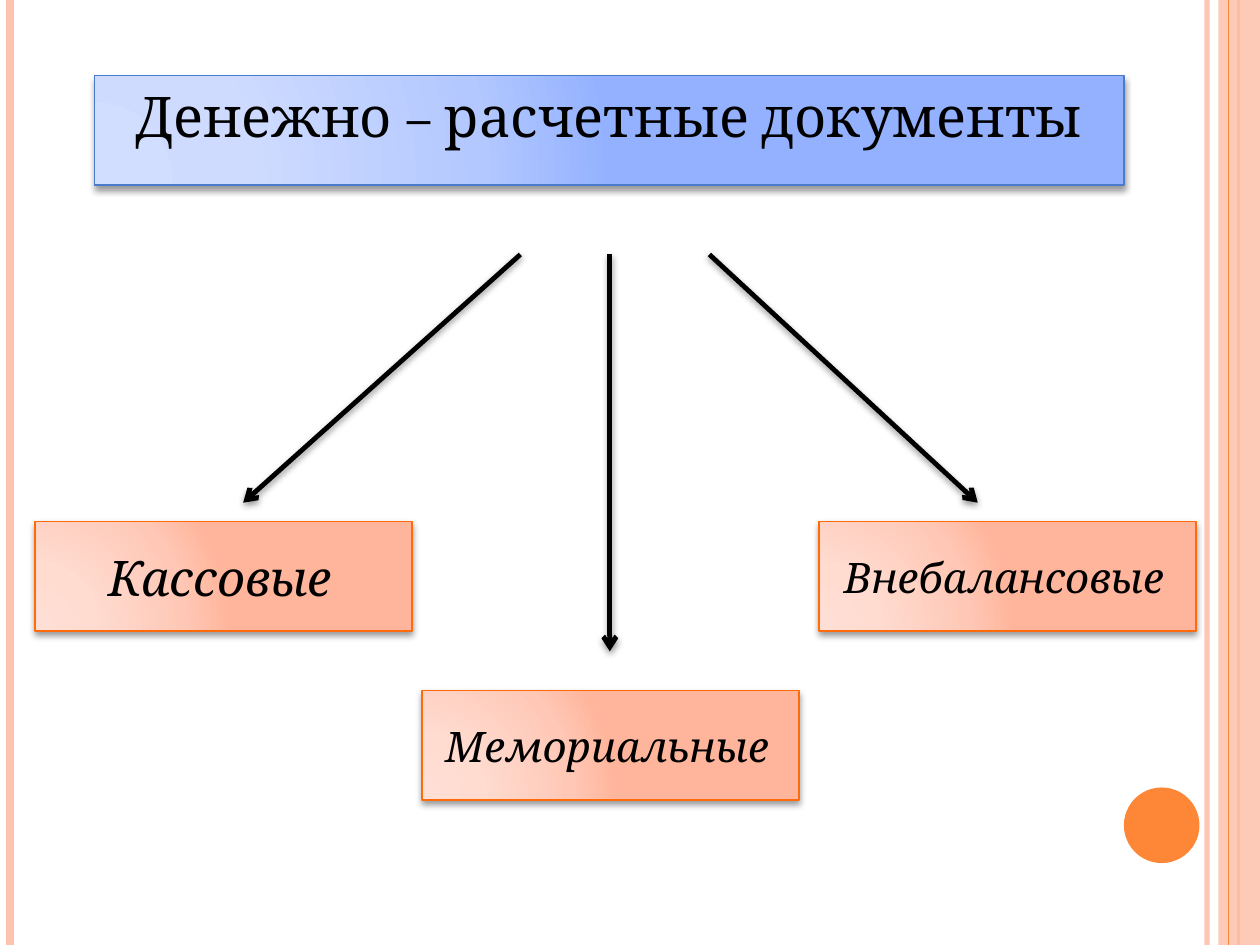
from dataclasses import dataclass

from lxml import etree
from pptx import Presentation
from pptx.dml.color import RGBColor
from pptx.enum.shapes import MSO_CONNECTOR, MSO_SHAPE
from pptx.enum.text import MSO_ANCHOR, PP_ALIGN
from pptx.oxml.ns import qn
from pptx.util import Inches, Pt

STRAIGHT = MSO_CONNECTOR.STRAIGHT
RECTANGLE, OVAL = MSO_SHAPE.RECTANGLE, MSO_SHAPE.OVAL
TOP, MIDDLE = MSO_ANCHOR.TOP, MSO_ANCHOR.MIDDLE
CENTER = PP_ALIGN.CENTER
TITLE_ONLY = 5
COLUMNS, ROWS = 100, 75


@dataclass(frozen=True)
class Theme:
    font: str = "Cambria"
    ink: str = "000000"
    accent: str = "FE8637"
    pale: str = "FEC3AE"
    card_line: str = "FF6B0A"
    title_line: str = "4A7BCB"
    card_stops: tuple = ((0, "FFDED5"), (30, "FFDBD0"), (75, "FFC8B6"), (100, "FFB59B"))
    title_stops: tuple = ((0, "D2DEFF"), (30, "CEDBFF"), (75, "B3C8FF"), (100, "93B1FF"))
    title_size: int = 32
    large: int = 28
    medium: int = 24
    small: int = 18


THEME = Theme()
GRID = Inches(10) // COLUMNS


def cells(*values):
    """Turn grid columns and rows into lengths."""
    return [round(value * GRID) for value in values]


def child(parent, tag, **attributes):
    values = {name: str(value) for name, value in attributes.items()}
    return etree.SubElement(parent, qn(tag), values)


def set_alpha(element, percent):
    color = next(element.iter(qn("a:srgbClr")))
    child(color, "a:alpha", val=percent * 1000)


def add_shadow(properties, percent, distance):
    effects = child(properties, "a:effectLst")
    shadow = child(effects, "a:outerShdw", blurRad=Pt(4), dist=Pt(distance),
                   dir=90 * 60000, rotWithShape=0)
    child(shadow, "a:srgbClr", val=THEME.ink)
    set_alpha(shadow, percent)


def add_glow_fill(properties, stops):
    gradient = child(properties, "a:gradFill", rotWithShape=1)
    stop_list = child(gradient, "a:gsLst")
    for position, color in stops:
        stop = child(stop_list, "a:gs", pos=position * 1000)
        child(stop, "a:srgbClr", val=color)
    circle = child(gradient, "a:path", path="circle")
    child(circle, "a:fillToRect", l=5000, t=100000, r=120000, b=10000)


def style_panel(panel, stops, line_color):
    properties = panel.element.spPr
    add_glow_fill(properties, stops)
    panel.line.color.rgb = RGBColor.from_string(line_color)
    panel.line.width = Pt(1)
    add_shadow(properties, 40, 2)


def add_text(panel, anchor, runs):
    frame = panel.text_frame
    frame.word_wrap = True
    frame.vertical_anchor = anchor
    para = frame.paragraphs[0]
    para.alignment = CENTER
    for text, size, italic in runs:
        span = para.add_run()
        span.text = text
        span.font.color.rgb = RGBColor.from_string(THEME.ink)
        formats = {"name": THEME.font, "size": Pt(size), "italic": italic}
        for name, value in formats.items():
            setattr(span.font, name, value)
    return para


def add_line(page, ends, color, width):
    line = page.shapes.add_connector(STRAIGHT, *cells(*ends))
    line.line.color.rgb = RGBColor.from_string(color)
    line.line.width = Pt(width)
    return line


def add_plain_shape(page, kind, box, color):
    shape = page.shapes.add_shape(kind, *cells(*box))
    shape.shadow.inherit = False
    shape.fill.solid()
    shape.fill.fore_color.rgb = RGBColor.from_string(color)
    shape.line.fill.background()
    return shape


def add_frame(page, box):
    """Side rails, right band and corner disc."""
    left, top, width, height = box
    right, bottom = left + width, top + height

    def rail(column, color, points):
        line = add_line(page, (column, top, column, bottom), color, points)
        child(line.element.spPr, "a:effectLst")
        return line

    inner = rail(right - 4.2, THEME.pale, 3)
    set_alpha(inner.element.spPr, 93)
    rail(left + 0.8, THEME.pale, 4.5)
    rail(right - 1.7, THEME.accent, 1.5)
    band = add_plain_shape(page, RECTANGLE, (right - 3.3, top, 3.3, height), THEME.pale)
    set_alpha(band.element.spPr, 87)
    rail(right - 2.5, THEME.accent, 0.75)
    add_plain_shape(page, OVAL, (right - 10.8, bottom - 12.5, 6, 6), THEME.accent)


def add_title(page, box):
    title = page.shapes.title
    title.left, title.top, title.width, title.height = cells(*box)
    style_panel(title, THEME.title_stops, THEME.title_line)
    para = add_text(title, TOP, [("Денежно – расчетные документы", THEME.title_size, False)])
    para.space_before = Pt(6)


def add_arrow(page, ends):
    arrow = add_line(page, ends, THEME.ink, 2.75)
    child(arrow.line._get_or_add_ln(), "a:tailEnd", type="arrow")
    add_shadow(arrow.element.spPr, 42, 1.6)


def add_card(page, box, text, size):
    card = page.shapes.add_shape(RECTANGLE, *cells(*box))
    style_panel(card, THEME.card_stops, THEME.card_line)
    add_text(card, MIDDLE, [(text, size, True), (" ", THEME.small, False)])


def add_branches(page, box):
    """Three arrows fanning out to three document types."""
    left, top, width, height = box
    card_width, card_height = 29.9, 8.7
    side_row, middle_row = top + 21.2, top + height - card_height
    # Arrow start and end columns, arrow end row, card column and row, label, size
    branches = (
        (45.6, 45.6, 31.5, left + 30.7, middle_row, "Мемориальные", THEME.medium),
        (38.5, 16.5, 19.7, left, side_row, "Кассовые", THEME.large),
        (53.5, 74.8, 19.7, left + width - card_width, side_row,
         "Внебалансовые", THEME.medium),
    )
    for start, end, drop, column, row, text, size in branches:
        add_arrow(page, (left + start, top, left + end, top + drop))
        add_card(page, (column, row, card_width, card_height), text, size)


def main():
    deck = Presentation()
    deck.slide_width, deck.slide_height = cells(COLUMNS, ROWS)
    page = deck.slides.add_slide(deck.slide_layouts[TITLE_ONLY])
    add_frame(page, (0, 0, COLUMNS, ROWS))
    add_title(page, (7.5, 6, 81.7, 8.7))
    add_branches(page, (2.8, 20.2, 92.1, 43.3))
    deck.save("out.pptx")


if __name__ == "__main__":
    main()
